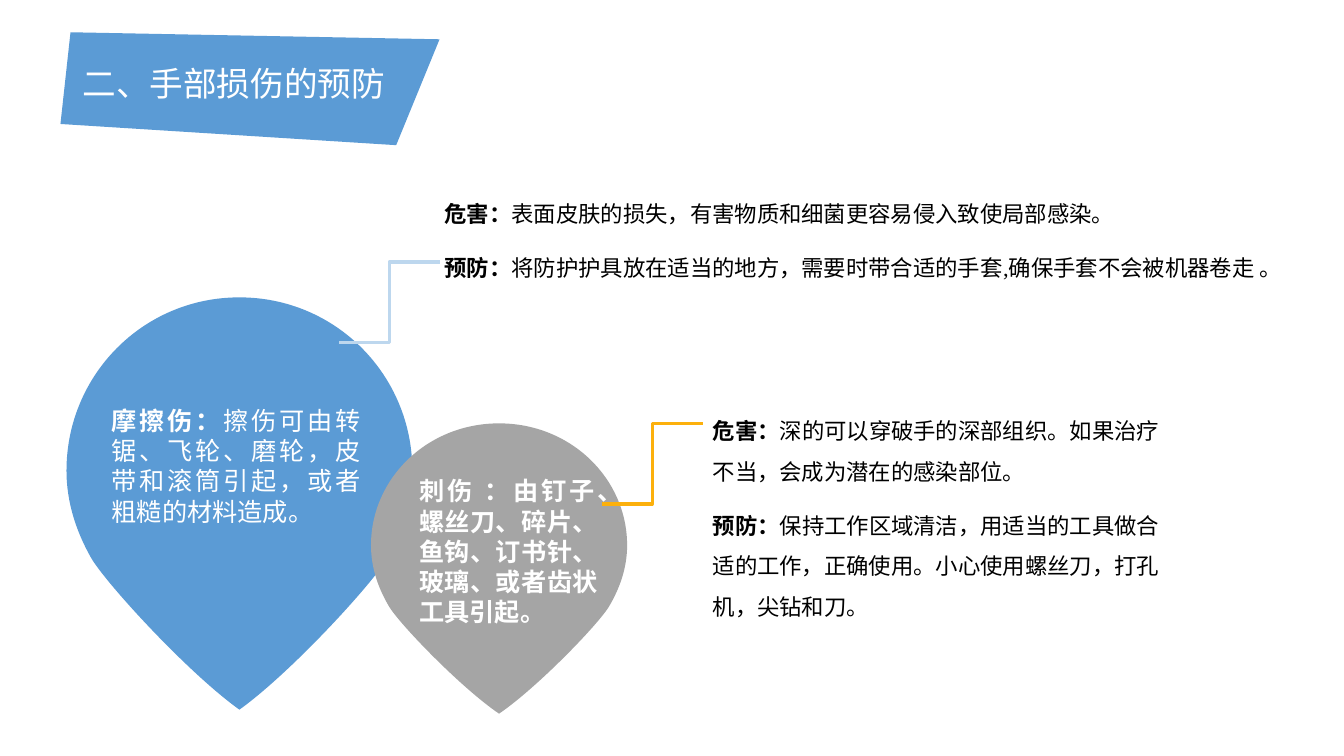
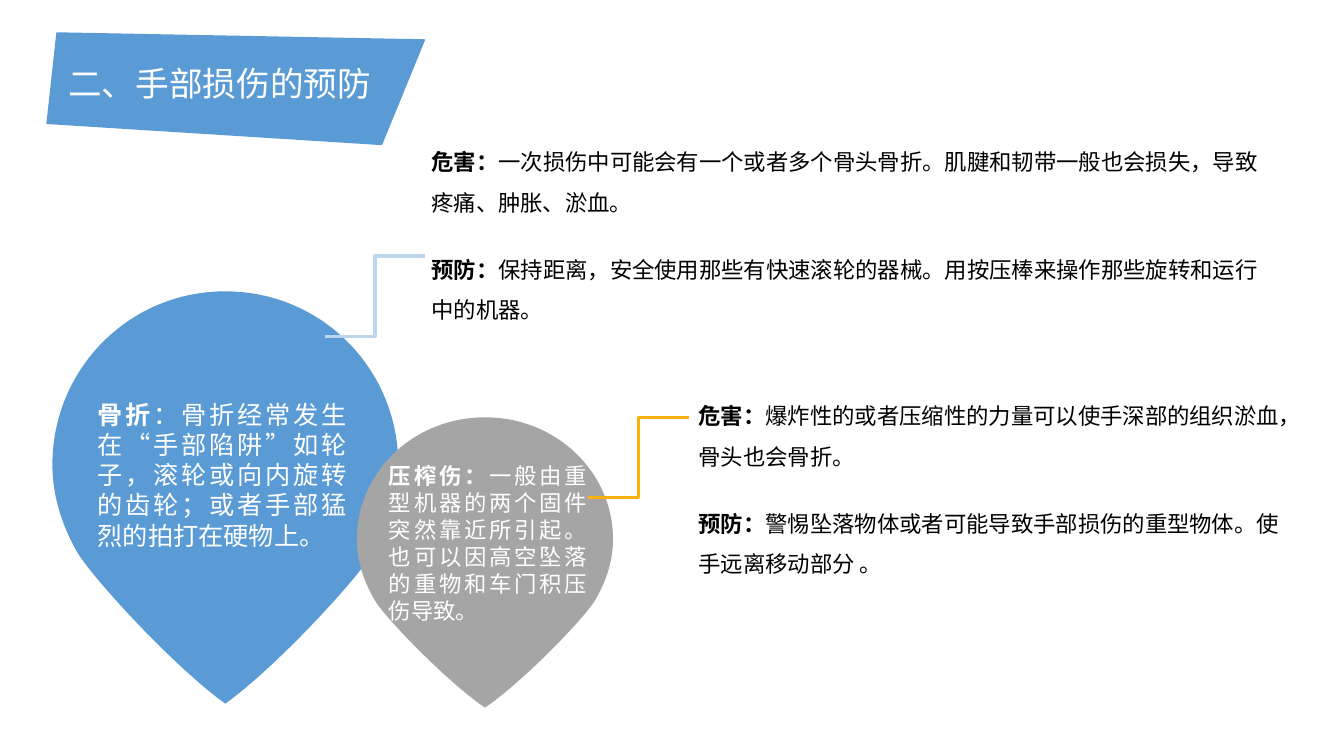
"""Build two slides on preventing hand injuries."""
import pptx
import pptx.util
import pptx.dml.color
import pptx.enum.lang
import pptx.enum.shapes
import pptx.enum.text
import pptx.oxml.ns
import lxml.etree

Inches = pptx.util.Inches
Pt = pptx.util.Pt
qn = pptx.oxml.ns.qn

FONT = "Times New Roman"
HEAD = "二、手部损伤的预防"
COLORS = {
    "blue": "5B9BD5",
    "gray": "A5A5A5",
    "pale": "BDD7EE",
    "gold": "FCB00C",
    "white": "FFFFFF",
    "black": "000000",
}
BANNER = [(0.7, 0.32), (4.36, 0.39), (3.93, 1.44), (0.6, 1.23)]
HALF = [
    (0.5, 0), (0.78, 0), (1, 0.19), (1, 0.42),
    (1, 0.5), (0.97, 0.57), (0.93, 0.63),
    (0.89, 0.69), (0.65, 0.91), (0.5, 1),
]
DROP = HALF + [(1 - x, y) for x, y in HALF[-2::-1]]
PINS = [("blue", 0.66, 2.95, 3.43, 4.09), ("gray", 3.68, 4.2, 2.54, 2.88)]
LINKS = [("pale", 4.36, 2.6), ("gold", 6.97, 4.2)]

SLIDES = [
    {
        "shift": (0, 0),
        "labels": [
            {"box": (1.01, 3.97, 2.67, 1.31), "size": 18, "paras": [
                ("摩擦伤：", "擦伤可由转锯、飞轮、磨轮，皮带和滚筒引起，或者粗糙的材料造成。")]},
            {"box": (4.06, 4.67, 1.97, 1.61), "size": 18, "paras": [
                ("刺伤 ：由钉子、螺丝刀、碎片、鱼钩、订书针、玻璃、或者齿状工具引起。", "")]},
        ],
        "notes": [
            {"box": (4.31, 1.94, 8.42, 0.91), "gap": 19.3, "paras": [
                ("危害：", "表面皮肤的损失，有害物质和细菌更容易侵入致使局部感染。"),
                ("预防：", "将防护护具放在适当的地方，需要时带合适的手套,确保手套不会被机器卷走 。")]},
            {"box": (6.97, 3.96, 4.71, 2.29), "gap": 10, "lead": 1.5, "grow": False, "paras": [
                ("危害：", "深的可以穿破手的深部组织。如果治疗不当，会成为潜在的感染部位。"),
                ("预防：", "保持工作区域清洁，用适当的工具做合适的工作，正确使用。"
                 "小心使用螺丝刀，打孔机，尖钻和刀。")]},
        ],
    },
    {
        "shift": (-0.14, -0.06),
        "labels": [
            {"box": (0.87, 3.91, 2.67, 1.61), "size": 18, "paras": [
                ("骨折", "：骨折经常发生在“手部陷阱”如轮子，滚轮或向内旋转的齿轮；"
                 "或者手部猛烈的拍打在硬物上。")]},
            {"box": (3.76, 4.54, 2.16, 1.72), "size": 16, "paras": [
                ("压榨伤：", "一般由重型机器的两个固件突然靠近所引起。"
                 "也可以因高空坠落的重物和车门积压伤导致。")]},
        ],
        "notes": [
            {"box": (4.18, 1.29, 8.42, 1.98), "gap": 19.3, "lead": 1.5, "paras": [
                ("危害：", "一次损伤中可能会有一个或者多个骨头骨折。"
                 "肌腱和韧带一般也会损失，导致疼痛、肿胀、淤血。"),
                ("预防：", "保持距离，安全使用那些有快速滚轮的器械。"
                 "用按压棒来操作那些旋转和运行中的机器。")]},
            {"box": (6.83, 3.81, 6.03, 1.98), "gap": 19.3, "lead": 1.5, "paras": [
                ("危害：", "爆炸性的或者压缩性的力量可以使手深部的组织淤血，骨头也会骨折。"),
                ("预防：", "警惕坠落物体或者可能导致手部损伤的重型物体。使手远离移动部分 。")]},
        ],
    },
]


def paint(name):
    return pptx.dml.color.RGBColor.from_string(COLORS[name])


def outline(slide, points, color):
    spots = [(Inches(x), Inches(y)) for x, y in points]
    pen = slide.shapes.build_freeform(*spots[0], scale=1.0)
    pen.add_line_segments(spots[1:], close=True)
    shape = pen.convert_to_shape()
    shape.shadow.inherit = False
    shape.fill.solid()
    shape.fill.fore_color.rgb = paint(color)
    shape.line.fill.background()
    return shape


def pin(slide, color, left, top, width, height):
    points = [(left + x * width, top + y * height) for x, y in DROP]
    shape = outline(slide, points[::3], color)
    for i, line in enumerate(shape._element.iter(qn("a:lnTo"))):
        line.tag = qn("a:cubicBezTo")
        line.remove(line[0])
        for x, y in DROP[3 * i + 1:3 * i + 4]:
            spot = lxml.etree.SubElement(line, qn("a:pt"))
            spot.set("x", str(int(x * shape.width)))
            spot.set("y", str(int(y * shape.height)))


def link(slide, color, x, y):
    line = slide.shapes.add_connector(
        pptx.enum.shapes.MSO_CONNECTOR.ELBOW,
        Inches(x), Inches(y), Inches(x - 1), Inches(y + 0.8))
    line.line.color.rgb = paint(color)
    line.line.width = Pt(2.25)
    lxml.etree.SubElement(line._element.spPr, qn("a:effectLst"))


def write(slide, box, paras, size=16, color="black", lead=None, gap=0,
          align=None, grow=True):
    frame = slide.shapes.add_textbox(*map(Inches, box)).text_frame
    frame.word_wrap = True
    fit = pptx.enum.text.MSO_AUTO_SIZE
    frame.auto_size = fit.SHAPE_TO_FIT_TEXT if grow else fit.NONE
    for i, parts in enumerate(paras):
        para = frame.add_paragraph() if i else frame.paragraphs[0]
        para.alignment = align
        para.line_spacing = lead
        if i:
            para.space_before = Pt(gap)
        for text, bold in zip(parts, (True, False)):
            if text:
                run = para.add_run()
                run.text = text
                font = run.font
                font.name, font.size, font.bold = FONT, Pt(size), bold
                font.color.rgb = paint(color)
                font.language_id = pptx.enum.lang.MSO_LANGUAGE_ID.SIMPLIFIED_CHINESE


def build(slide, data):
    dx, dy = data["shift"]
    outline(slide, [(x + dx, y) for x, y in BANNER], "blue")
    write(slide, (0.72 + dx, 0.58, 3.64, 0.5), [("", HEAD)], size=24, color="white")
    for color, x, y, width, height in PINS:
        pin(slide, color, x + dx, y + dy, width, height)
    for label in data["labels"]:
        write(slide, color="white", align=pptx.enum.text.PP_ALIGN.JUSTIFY, **label)
    for note in data["notes"]:
        write(slide, **note)
    for color, x, y in LINKS:
        link(slide, color, x + dx, y + dy)


def main():
    deck = pptx.Presentation()
    deck.slide_width, deck.slide_height = Inches(13.33), Inches(7.5)
    for data in SLIDES:
        build(deck.slides.add_slide(deck.slide_layouts[6]), data)
    deck.save("out.pptx")


if __name__ == "__main__":
    main()
